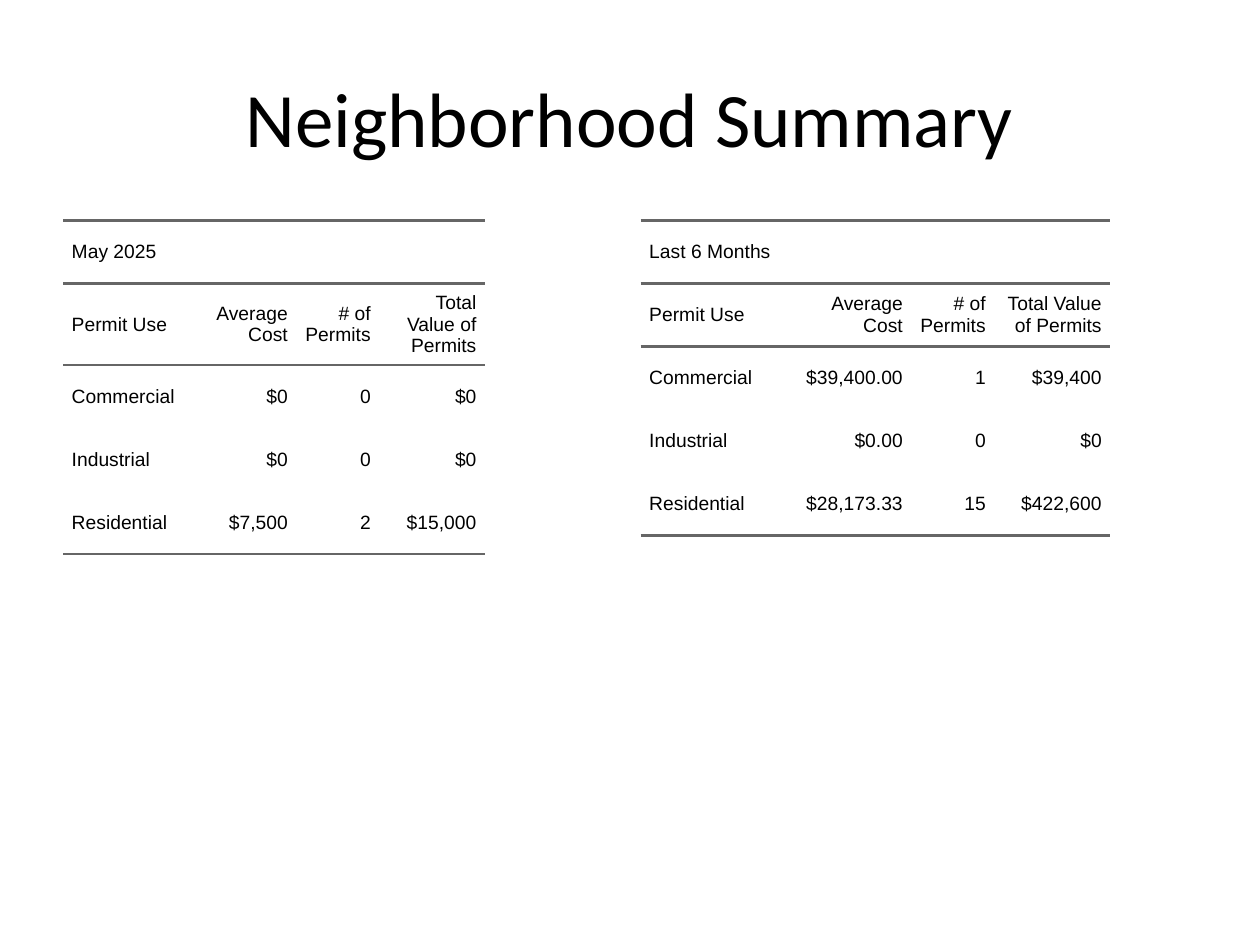
from lxml import etree
from pptx import Presentation
from pptx.dml.color import RGBColor
from pptx.enum import text
from pptx.oxml import ns
from pptx.util import Pt

BLACK = RGBColor(0, 0, 0)
GRAY = RGBColor(0x66, 0x66, 0x66)

TITLE = "Neighborhood Summary"
HEADER = ("Permit Use", "Average Cost", "# of Permits", "Total Value of Permits")
SUMMARIES = [
    {
        "period": "May 2025",
        "left": 36,
        "widths": (79.4, 54.1, 47.4, 60.4),
        "rows": [
            ("Commercial", "$0", "0", "$0"),
            ("Industrial", "$0", "0", "$0"),
            ("Residential", "$7,500", "2", "$15,000"),
        ],
    },
    {
        "period": "Last 6 Months",
        "left": 366,
        "widths": (79.4, 75.5, 47.4, 66.3),
        "rows": [
            ("Commercial", "$39,400.00", "1", "$39,400"),
            ("Industrial", "$0.00", "0", "$0"),
            ("Residential", "$28,173.33", "15", "$422,600"),
        ],
    },
]
TABLE_TOP = 126
ROW_HEIGHT = 36
PADDING = 5
RULE_WIDTH = 1.5


def set_borders(cell, ruled_sides):
    properties = cell._tc.get_or_add_tcPr()
    for position, side in enumerate(("lnL", "lnR", "lnT", "lnB")):
        ruled = side in ruled_sides
        line = etree.Element(ns.qn("a:" + side), w=str(Pt(RULE_WIDTH) if ruled else 0))
        if ruled:
            fill = etree.SubElement(line, ns.qn("a:solidFill"))
            etree.SubElement(fill, ns.qn("a:srgbClr"), val=str(GRAY))
        else:
            etree.SubElement(line, ns.qn("a:noFill"))
        properties.insert(position, line)


def format_text(paragraph, font_name, size, alignment):
    paragraph.alignment = alignment
    for run in paragraph.runs:
        run.font.name = font_name
        run.font.size = Pt(size)
        run.font.color.rgb = BLACK


def format_cell(cell, value, alignment, ruled_sides):
    cell.fill.background()
    cell.vertical_anchor = text.MSO_ANCHOR.MIDDLE
    cell.margin_left = cell.margin_right = 0
    cell.margin_top = cell.margin_bottom = Pt(PADDING)
    set_borders(cell, ruled_sides)
    cell.text_frame.text = value
    paragraph = cell.text_frame.paragraphs[0]
    paragraph.space_before = paragraph.space_after = Pt(PADDING)
    format_text(paragraph, "Arial", 11, alignment)
    indents = paragraph._p.get_or_add_pPr()
    for name, length in (("marL", PADDING), ("marR", PADDING), ("indent", 0)):
        indents.set(name, str(Pt(length)))


def add_summary(slide, summary):
    rows = [(summary["period"], "", "", ""), HEADER, *summary["rows"]]
    widths = summary["widths"]
    table = slide.shapes.add_table(
        len(rows), len(widths), Pt(summary["left"]), Pt(TABLE_TOP),
        Pt(sum(widths)), Pt(ROW_HEIGHT * len(rows)),
    ).table
    table.first_row = table.horz_banding = False
    for column, width in zip(table.columns, widths):
        column.width = Pt(width)
    for row_index, values in enumerate(rows):
        table.rows[row_index].height = Pt(ROW_HEIGHT)
        if row_index < 2:
            ruled_sides = ("lnT", "lnB")
        elif row_index == len(rows) - 1:
            ruled_sides = ("lnB",)
        elif row_index == 2:
            ruled_sides = ("lnT",)
        else:
            ruled_sides = ()
        for column_index, value in enumerate(values):
            alignment = text.PP_ALIGN.RIGHT if column_index else text.PP_ALIGN.LEFT
            format_cell(table.cell(row_index, column_index), value, alignment, ruled_sides)
    table.cell(0, 0).merge(table.cell(0, len(widths) - 1))


def add_title(slide):
    title = slide.shapes.add_textbox(Pt(36), Pt(21.6), Pt(648), Pt(90))
    frame = title.text_frame
    frame.word_wrap = True
    frame.vertical_anchor = text.MSO_ANCHOR.MIDDLE
    frame.text = TITLE
    format_text(frame.paragraphs[0], "Calibri", 44, text.PP_ALIGN.CENTER)


def main():
    presentation = Presentation()
    presentation.slide_width = Pt(720)
    presentation.slide_height = Pt(540)
    slide = presentation.slides.add_slide(presentation.slide_layouts[6])
    for summary in SUMMARIES:
        add_summary(slide, summary)
    add_title(slide)
    presentation.save("out.pptx")


if __name__ == "__main__":
    main()
